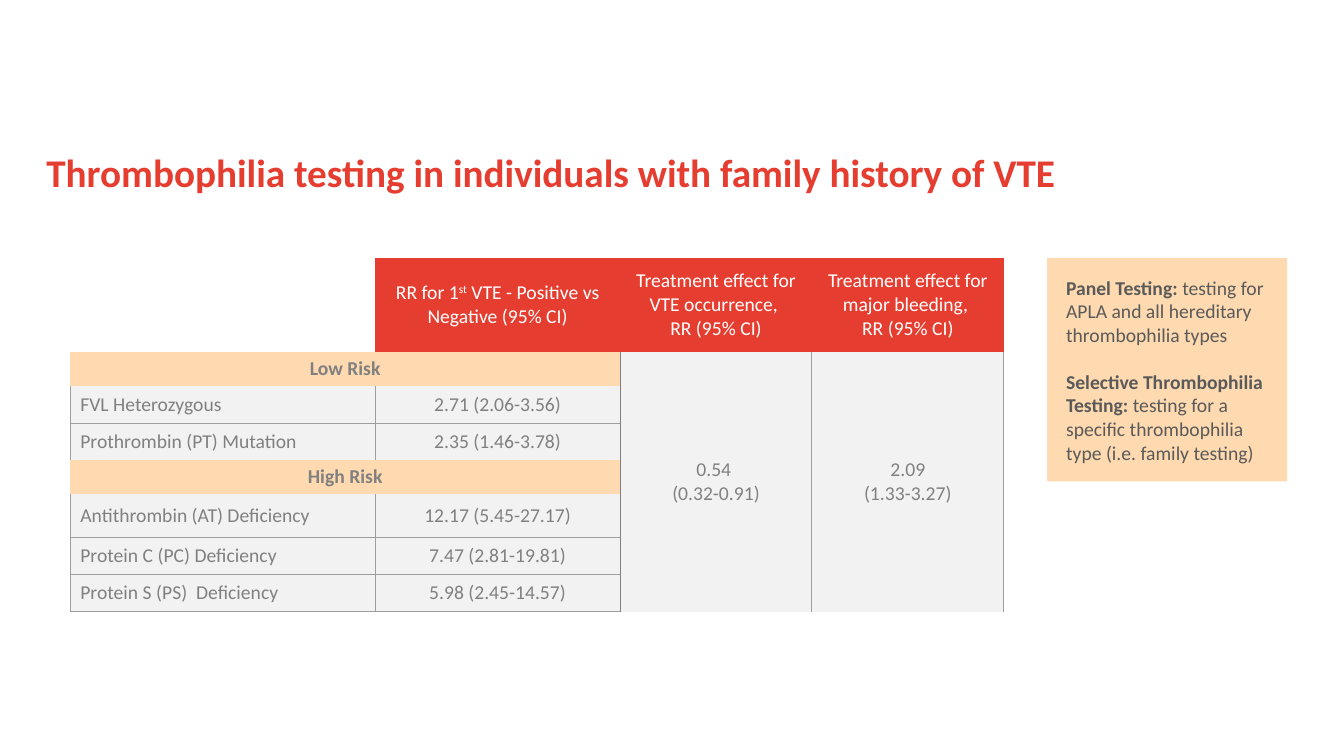
from lxml.etree import SubElement
from pptx import Presentation
from pptx.dml.color import RGBColor
from pptx.enum.shapes import MSO_SHAPE as Shape
from pptx.enum.text import MSO_ANCHOR as Anchor, PP_ALIGN as Align
from pptx.oxml.ns import qn
from pptx.util import Pt

TITLE = "Thrombophilia testing in individuals with family history of VTE"
HEADERS = [
    [[("RR for 1", ""), ("st", "super"), (" VTE - Positive vs Negative (95% CI)", "")]],
    [[("Treatment effect for VTE occurrence, ", "")], [("RR (95% CI)", "")]],
    [[("Treatment effect for major bleeding, ", "")], [("RR (95% CI)", "")]],
]
RISKS = [
    ("Low Risk", None),
    ("FVL Heterozygous", "2.71 (2.06-3.56)"),
    ("Prothrombin (PT) Mutation", "2.35 (1.46-3.78)"),
    ("High Risk", None),
    ("Antithrombin (AT) Deficiency", "12.17 (5.45-27.17)"),
    ("Protein C (PC) Deficiency", "7.47 (2.81-19.81)"),
    ("Protein S (PS)  Deficiency", "5.98 (2.45-14.57)"),
]
EFFECTS = [("0.54 ", "(0.32-0.91)"), ("2.09", "(1.33-3.27)")]
DEFINITIONS = [
    [("Panel Testing: ", "bold"),
     ("testing for APLA and all hereditary thrombophilia types", "")],
    [("Selective Thrombophilia Testing:", "bold"),
     (" testing for a specific thrombophilia type (i.e. family testing)", "")],
]

RED, PEACH, PALE, WHITE = "E53E31", "FFD9B0", "F2F2F2", "FFFFFF"
GREY, DARK = "808080", "595A59"
THIN, LINE = ("808080", 0.5), ("9E9E9E", 0.75)
COLUMNS = [217.8, 175, 137, 137]
ROWS = [67, 24.3, 26.6, 26.6, 24.3, 30.8, 26.6, 26.6]
TABLE_LEFT, TABLE_TOP = 50.2, 184.3
PLAIN_STYLE = "{2D5ABB26-0587-4C30-8999-92F81FD0307C}"


def color(value):
    return RGBColor.from_string(value)


def write(frame, paragraphs, size, ink, align=Align.LEFT, gap=0):
    frame.word_wrap = True
    for index, runs in enumerate(paragraphs):
        paragraph = frame.add_paragraph() if index else frame.paragraphs[0]
        paragraph.alignment = align
        if index:
            paragraph.space_before = Pt(gap)
        for text, style in runs:
            run = paragraph.add_run()
            run.text = text
            run.font.name = "Calibri"
            run.font.size = Pt(size)
            run.font.bold = style == "bold"
            run.font.color.rgb = color(ink)
            if style == "super":
                run._r.get_or_add_rPr().set("baseline", "30000")


def set_margins(frame, left, top, right, bottom):
    frame.margin_left, frame.margin_top = Pt(left), Pt(top)
    frame.margin_right, frame.margin_bottom = Pt(right), Pt(bottom)


def set_borders(cell, borders):
    properties = cell._tc.get_or_add_tcPr()
    for side in "LRTB":
        if side not in borders:
            SubElement(SubElement(properties, qn("a:ln" + side), w="0"), qn("a:noFill"))
            continue
        ink, width = borders[side]
        line = SubElement(properties, qn("a:ln" + side), w=str(Pt(width)))
        fill = SubElement(line, qn("a:solidFill"))
        SubElement(fill, qn("a:srgbClr"), val=ink)


def borders_at(row, column):
    if row == 0:
        return {}
    last = row == len(RISKS)
    if column >= 2:
        borders = {"L": THIN if column == 2 else LINE, "R": LINE}
        return {**borders, "B": LINE} if last else borders
    if RISKS[row - 1][1] is None:
        return {"R": THIN} if column == 1 else {}
    borders = {"L": LINE, "R": THIN if column == 1 else LINE}
    if RISKS[row - 2][1]:
        borders["T"] = LINE
    if last or RISKS[row][1]:
        borders["B"] = LINE
    return borders


def fill_at(row, column):
    if row == 0:
        return RED if column else None
    return PEACH if column < 2 and RISKS[row - 1][1] is None else PALE


def add_risk_table(slide):
    frame = slide.shapes.add_table(len(ROWS), len(COLUMNS), Pt(TABLE_LEFT), Pt(TABLE_TOP),
                                   Pt(sum(COLUMNS)), Pt(sum(ROWS)))
    table = frame.table
    table.first_row = table.horz_banding = False
    table._tbl.tblPr.find(qn("a:tableStyleId")).text = PLAIN_STYLE
    for column, width in zip(table.columns, COLUMNS):
        column.width = Pt(width)
    for row, height in zip(table.rows, ROWS):
        row.height = Pt(height)
    for row in range(len(ROWS)):
        for column in range(len(COLUMNS)):
            cell = table.cell(row, column)
            set_borders(cell, borders_at(row, column))
            fill = fill_at(row, column)
            if fill:
                cell.fill.solid()
                cell.fill.fore_color.rgb = color(fill)
            else:
                cell.fill.background()
            cell.vertical_anchor = Anchor.MIDDLE

    def put(row, column, paragraphs, ink=GREY, align=Align.CENTER):
        write(table.cell(row, column).text_frame, paragraphs, 14, ink, align)

    for column, header in enumerate(HEADERS, 1):
        put(0, column, header, WHITE)
    for row, (name, ratio) in enumerate(RISKS, 1):
        if ratio is None:
            table.cell(row, 0).merge(table.cell(row, 1))
            put(row, 0, [[(name, "bold")]])
        else:
            put(row, 0, [[(name, "")]], align=Align.LEFT)
            put(row, 1, [[(ratio, "")]])
    for column, lines in enumerate(EFFECTS, 2):
        table.cell(1, column).merge(table.cell(len(RISKS), column))
        put(1, column, [[(line, "")] for line in lines])


def add_definitions(slide):
    panel = slide.shapes.add_shape(Shape.RECTANGLE, Pt(748), Pt(TABLE_TOP), Pt(171.4), Pt(159.5))
    panel.shadow.inherit = False
    panel.fill.solid()
    panel.fill.fore_color.rgb = color(PEACH)
    panel.line.fill.background()
    frame = panel.text_frame
    frame.vertical_anchor = Anchor.MIDDLE
    set_margins(frame, 13.5, 3.6, 7.2, 3.6)
    write(frame, DEFINITIONS, 14, DARK, gap=17)


def add_title(slide):
    box = slide.shapes.add_textbox(Pt(33.1), Pt(105.8), Pt(864), Pt(56))
    set_margins(box.text_frame, 0, 0, 0, 0)
    write(box.text_frame, [[(TITLE, "bold")]], 28, RED)


def main():
    presentation = Presentation()
    presentation.slide_width, presentation.slide_height = Pt(960), Pt(540)
    slide = presentation.slides.add_slide(presentation.slide_layouts[6])
    add_risk_table(slide)
    add_definitions(slide)
    add_title(slide)
    presentation.save("out.pptx")


if __name__ == "__main__":
    main()
